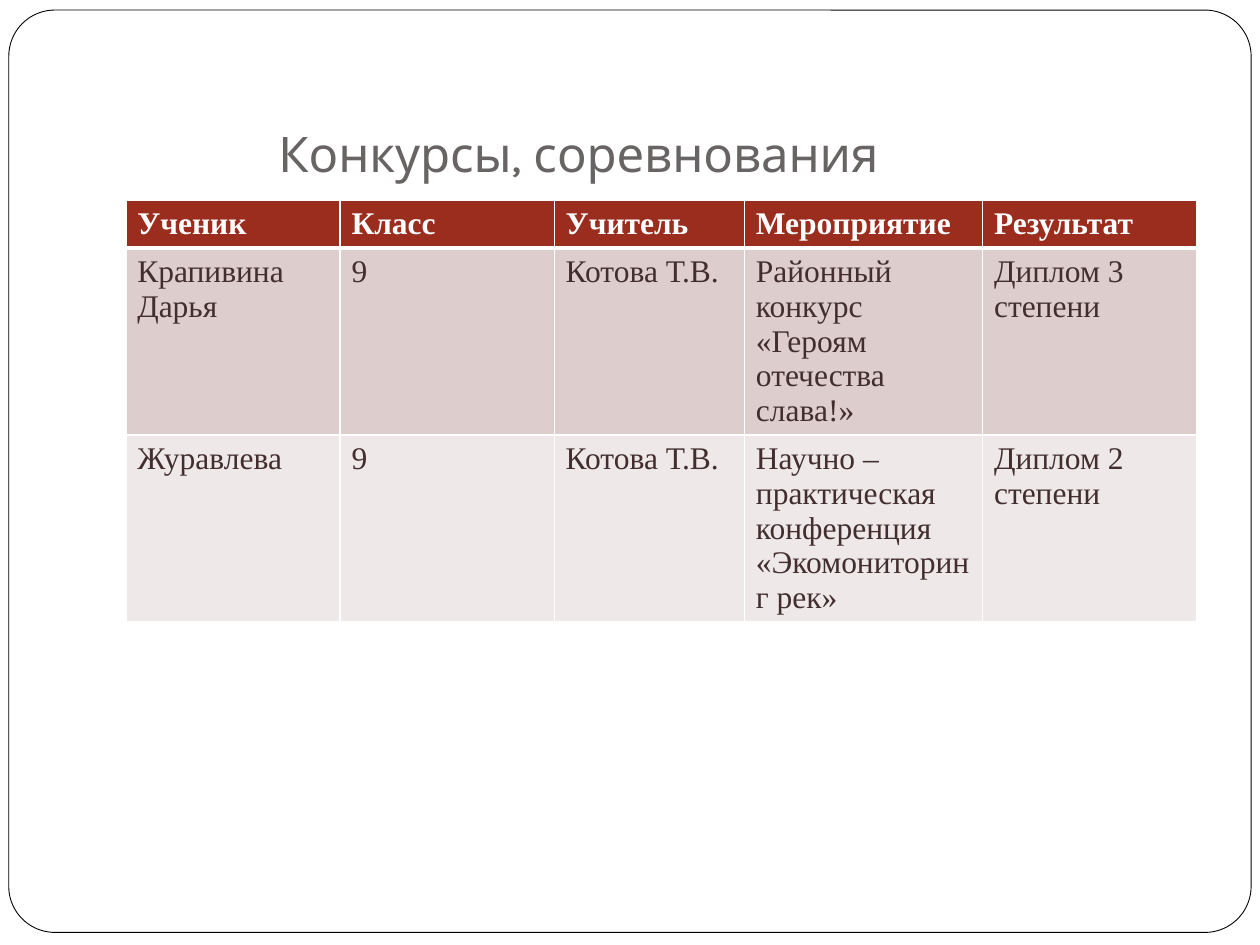
"""Builds a slide with a table of pupils' contest results."""
from lxml import etree
from pptx import Presentation
from pptx.dml.color import RGBColor
from pptx.enum.shapes import MSO_SHAPE
from pptx.enum.text import MSO_ANCHOR, MSO_AUTO_SIZE, PP_ALIGN
from pptx.oxml.ns import qn
from pptx.util import Inches, Pt

ROUNDED = MSO_SHAPE.ROUNDED_RECTANGLE
BOTTOM = MSO_ANCHOR.BOTTOM
LEFT = PP_ALIGN.LEFT
NO_FIT = MSO_AUTO_SIZE.NONE
TITLE_ONLY = 5
COLUMNS, ROWS = 100, 75

WHITE = RGBColor(0xFF, 0xFF, 0xFF)
BLACK = RGBColor(0x00, 0x00, 0x00)
GRAY = RGBColor(0x69, 0x64, 0x64)
RED = RGBColor(0x9B, 0x2D, 0x1F)
BROWN = RGBColor(0x42, 0x2E, 0x2E)
BANDS = (RGBColor(0xDE, 0xCD, 0xCD), RGBColor(0xEF, 0xE8, 0xE8))

RESULTS = [
    ["Ученик", "Класс", "Учитель", "Мероприятие", "Результат"],
    ["Крапивина Дарья", "9", "Котова Т.В.",
     "Районный конкурс «Героям отечества слава!»", "Диплом 3 степени"],
    ["Журавлева", "9", "Котова Т.В.",
     "Научно – практическая конференция «Экомониторинг рек»", "Диплом 2 степени"],
]


class SlideBuilder:
    """Holds the style and the current slide, measured on a 100 by 75 grid."""

    title_font, title_size = "Karla", Pt(28)
    table_font, table_size = "Times New Roman", Pt(18)

    def __init__(self, prs):
        self.prs = prs
        self.s = prs.slides.add_slide(prs.slide_layouts[TITLE_ONLY])

    def x(self, columns):
        return round(self.prs.slide_width * columns / COLUMNS)

    def y(self, rows):
        return round(self.prs.slide_height * rows / ROWS)

    def box(self, left, top, width, height):
        return self.x(left), self.y(top), self.x(width), self.y(height)

    def frame(self, *place):
        sp = self.s.shapes.add_shape(ROUNDED, *self.box(*place))
        sp.adjustments[0] = 0.05
        sp.shadow.inherit = False
        sp.fill.solid()
        sp.fill.fore_color.rgb = WHITE
        sp.line.color.rgb = BLACK
        sp.line.width = Pt(0.5)
        self.s.shapes.element.insert(2, sp.element)

    def title(self, text, indent, *place):
        sp = self.s.shapes.title
        sp.left, sp.top, sp.width, sp.height = self.box(*place)
        tf = sp.text_frame
        tf.text = text
        tf.word_wrap, tf.auto_size = True, NO_FIT
        tf.vertical_anchor = BOTTOM
        tf.margin_left = self.x(indent)
        tf.margin_bottom = Inches(0.1)
        p = tf.paragraphs[0]
        p.alignment = LEFT
        p.font.name, p.font.size = self.title_font, self.title_size
        p.font.color.rgb = GRAY

    def table(self, data, left, top, widths, heights):
        place = self.box(left, top, sum(widths), sum(heights))
        table = self.s.shapes.add_table(len(data), len(widths), *place).table
        for column, width in zip(table.columns, widths):
            column.width = self.x(width)
        for i, (row, height) in enumerate(zip(table.rows, heights)):
            row.height = self.y(height)
            for cell, text in zip(row.cells, data[i]):
                self.cell(cell, text, i)

    def cell(self, cell, text, row):
        header = row == 0
        cell.text = text
        cell.margin_left = cell.margin_right = Inches(0.09)
        p = cell.text_frame.paragraphs[0]
        p.font.name, p.font.size = self.table_font, self.table_size
        p.font.bold = header
        p.font.color.rgb = WHITE if header else BROWN
        self.borders(cell, top=3 if row == 1 else 1, bottom=3 if header else 1)
        cell.fill.solid()
        cell.fill.fore_color.rgb = RED if header else BANDS[(row - 1) % 2]

    def borders(self, cell, top, bottom):
        tc_pr = cell._tc.get_or_add_tcPr()
        for side, width in (("L", 1), ("R", 1), ("T", top), ("B", bottom)):
            ln = etree.SubElement(tc_pr, qn(f"a:ln{side}"), w=str(Pt(width)))
            fill = etree.SubElement(ln, qn("a:solidFill"))
            etree.SubElement(fill, qn("a:srgbClr"), val=str(WHITE))


def main():
    prs = Presentation()
    prs.slide_width, prs.slide_height = Inches(10), Inches(7.5)
    slide = SlideBuilder(prs)
    slide.frame(0.7, 0.8, 98.6, 73.2)
    slide.title("Конкурсы, соревнования", 12.1, 10, 3, 85, 12.5)
    slide.table(RESULTS, 10, 15.9, (17, 17, 15.1, 18.9, 17), (3.7, 14.8, 14.8))
    prs.save("out.pptx")


if __name__ == "__main__":
    main()
